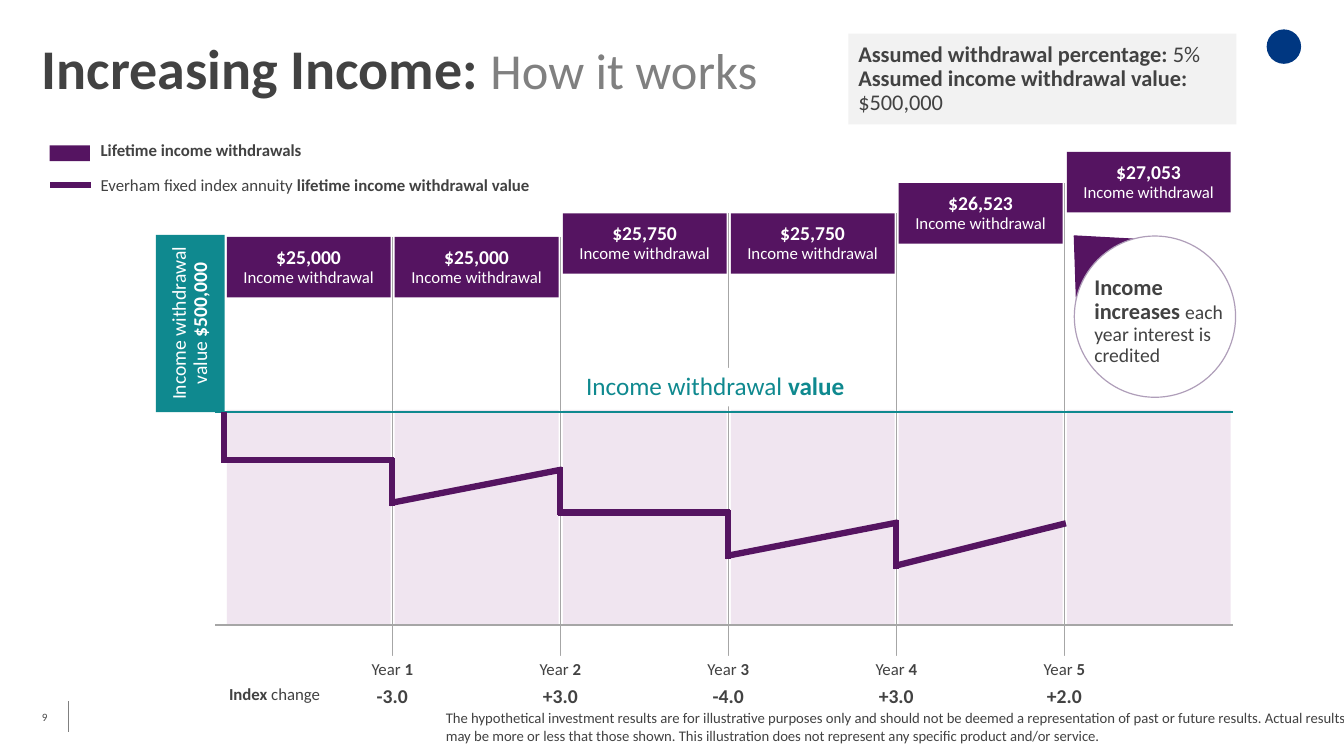
"""Build the slide on how rising income withdrawals work."""
from lxml.etree import SubElement
from pptx import Presentation
from pptx.dml.color import RGBColor as RGB
from pptx.enum.shapes import MSO_CONNECTOR as LINK, MSO_SHAPE as KIND
from pptx.enum.text import MSO_ANCHOR as ANCHOR, PP_ALIGN as ALIGN
from pptx.oxml.ns import qn
from pptx.util import Inches, Pt

WHITE = RGB(0xFF, 0xFF, 0xFF)
INK = RGB(0x42, 0x42, 0x42)
DARK = RGB(0x4D, 0x4D, 0x4D)
GREY = RGB(0x80, 0x80, 0x80)
RULE = RGB(0xA6, 0xA6, 0xA6)
PALE = RGB(0xF2, 0xF2, 0xF2)
PLUM = RGB(0x55, 0x14, 0x61)
LILAC = RGB(0xE5, 0xD0, 0xE5)
EDGE = RGB(0xAF, 0x9E, 0xB9)
TEAL = RGB(0x0F, 0x89, 0x8F)
NAVY = RGB(0x00, 0x37, 0x81)

COLS, ROWS = 160, 90
UNIT = Inches(7.5) / ROWS
LEFT, STEP, BAR = 27, 20, 19.5
TOP, BASE = 49, 74.4
BARS = [("$25,000", 28.2), ("$25,000", 28.2), ("$25,750", 25.4),
        ("$25,750", 25.4), ("$26,523", 21.8), ("$27,053", 18.1)]
MOVES = ["-3.0", "+3.0", "-4.0", "+3.0", "+2.0"]
PATH = [(49.3, 54.8, 54.8), (54.8, 59.9, 55.9), (55.9, 61, 61),
        (61, 66.2, 62.2), (62.2, 67.4, 62.3)]


def grid(*nums):
    """Turn grid units into slide lengths."""
    return [round(num * UNIT) for num in nums]


def tick(year):
    """Give the x of the line that ends a year."""
    return LEFT - 0.3 + STEP * year


def put(item, vals):
    """Set each value of a dict on an object."""
    for key, val in vals.items():
        setattr(item, key, val)


def write(shape, paras, color=INK, inset=None, anchor=ANCHOR.TOP, **form):
    """Fill a shape with paragraphs of (text, size, bold[, color]) runs."""
    frame = shape.text_frame
    put(frame, {"word_wrap": True, "vertical_anchor": anchor})
    if inset is not None:
        put(frame, dict(zip(("margin_left", "margin_right", "margin_top",
                             "margin_bottom"), grid(*inset))))
    look = {"alignment": ALIGN.LEFT, "line_spacing": 0.9} | form
    for num, runs in enumerate(paras):
        para = frame.add_paragraph() if num else frame.paragraphs[0]
        put(para, look)
        if num == 0:
            para.space_before = Pt(0)
        for text, size, bold, *tint in runs:
            run = para.add_run()
            run.text = text
            put(run.font, {"name": "Calibri", "size": Pt(size), "bold": bold})
            run.font.color.rgb = tint[0] if tint else color


def text(slide, box, paras, **form):
    """Add a text box."""
    write(slide.shapes.add_textbox(*grid(*box)), paras, **form)


def block(slide, box, fill, kind=KIND.RECTANGLE, edge=None, alpha=None):
    """Add a filled shape."""
    shape = slide.shapes.add_shape(kind, *grid(*box))
    shape.shadow.inherit = False
    shape.fill.solid()
    shape.fill.fore_color.rgb = fill
    if alpha:
        tint = shape.fill._xPr.find(qn("a:solidFill"))[0]
        SubElement(tint, qn("a:alpha"), val=str(alpha * 1000))
    if edge:
        shape.line.color.rgb = edge
        shape.line.width = Pt(0.85)
    else:
        shape.line.fill.background()
    return shape


def line(slide, ends, color, width):
    """Add a straight line between two grid points."""
    link = slide.shapes.add_connector(LINK.STRAIGHT, *grid(*ends))
    link.line.color.rgb = color
    link.line.width = Pt(width)
    SubElement(link._element.spPr, qn("a:effectLst"))


def head(slide):
    """Add the title, mark, assumptions and legend."""
    block(slide, (150.8, 3.5, 4.1, 4.1), NAVY, KIND.OVAL)
    text(slide, (5, 1.4, 93.4, 10.7),
         [[("Increasing Income: ", 40, True),
           ("How it works", 36, False, GREY)]],
         inset=(0, 0, 0, 0), anchor=ANCHOR.BOTTOM)
    note = block(slide, (101, 4, 46.2, 10.8), PALE)
    write(note, [[("Assumed withdrawal percentage: ", 16, True),
                  ("5%", 16, False)],
                 [("Assumed income withdrawal value: ", 16, True),
                  ("$500,000", 16, False)]], anchor=ANCHOR.MIDDLE)
    block(slide, (5.9, 17.3, 4.8, 1.9), PLUM)
    line(slide, (6, 22, 10.8, 22), PLUM, 4.5)
    text(slide, (10.8, 16.3, 63.8, 7.9),
         [[("Lifetime income withdrawals", 12, True)],
          [("Everham fixed index annuity ", 12, False),
           ("lifetime income withdrawal value", 12, True)]],
         space_before=Pt(12))


def chart(slide):
    """Draw the shaded years, bars and value path."""
    for num in range(len(BARS)):
        block(slide, (LEFT + STEP * num, 48.8, BAR, 25.6), LILAC, alpha=55)
    line(slide, (25.6, BASE, 146.8, BASE), RULE, 1.5)
    for num, (sum_, top) in enumerate(BARS):
        if num < len(MOVES):
            line(slide, (tick(num + 1), top, tick(num + 1), 80), RULE, 1)
        bar = block(slide, (LEFT + STEP * num, top, BAR, 7.2), PLUM)
        write(bar, [[(sum_, 14, True)], [("Income withdrawal", 12, False)]],
              color=WHITE, anchor=ANCHOR.MIDDLE, alignment=ALIGN.CENTER)
    line(slide, (25.6, TOP, 146.8, TOP), TEAL, 1.5)
    name = block(slide, (68.6, 43.8, 36.4, 4.6), WHITE)
    write(name, [[("Income withdrawal ", 18, False), ("value", 18, True)]],
          color=TEAL, anchor=ANCHOR.MIDDLE)
    side = block(slide, (12.1, 34.4, 21.1, 8.2), TEAL)
    side.rotation = 270
    write(side, [[("Income withdrawal value ", 14, False),
                  ("$500,000", 14, True)]],
          color=WHITE, anchor=ANCHOR.MIDDLE, alignment=ALIGN.CENTER)
    for year, (top, low, end) in enumerate(PATH):
        spot = tick(year)
        line(slide, (spot, top - 0.3, spot, low + 0.3), PLUM, 4.5)
        line(slide, (spot - 0.3, low, spot + STEP + 0.2, end), PLUM, 4.5)


def years(slide):
    """Label each year with its index change."""
    text(slide, (25.4, 80.5, 13.9, 4.6),
         [[("Index", 12, True), (" change", 12, False)]],
         anchor=ANCHOR.MIDDLE, alignment=ALIGN.RIGHT)
    for year, move in enumerate(MOVES, 1):
        spot = tick(year)
        label = block(slide, (spot - 3.8, 78.1, 7.6, 4.3), WHITE)
        write(label, [[("Year", 12, False), (f" {year}", 12, True)]],
              alignment=ALIGN.CENTER)
        text(slide, (spot - 3.3, 81.1, 6.6, 3.6), [[(move, 14, True)]],
             alignment=ALIGN.CENTER)


def bubble(slide):
    """Add the round callout and its pointer."""
    tail = block(slide, (123.2, 26.9, 15.2, 8.3), PLUM,
                 KIND.ISOSCELES_TRIANGLE, PLUM)
    tail.rotation = 315.6
    block(slide, (127.9, 28.1, 19.2, 19.2), WHITE, KIND.OVAL, EDGE)
    text(slide, (129.1, 32.3, 19.7, 8.2),
         [[("Income increases ", 16, True),
           ("each year interest is credited", 14, False)]])


def foot(slide):
    """Add the page number and the disclaimer."""
    line(slide, (8.1, 83.5, 8.1, 87.2), GREY, 0.75)
    text(slide, (5, 83, 4.8, 4.8), [[("9", 8, False)]], color=DARK,
         inset=(0, 0, 0.7, 0.7), anchor=ANCHOR.MIDDLE, line_spacing=1.0)
    text(slide, (51.9, 83.8, 111.4, 5.8), [[(
        "The hypothetical investment results are for illustrative purposes "
        "only and should not be deemed a representation of past or future "
        "results. Actual results may be more or less that those shown. This "
        "illustration does not represent any specific product and/or "
        "service.", 10.5, False)]], line_spacing=1.0)


def main():
    """Build and save the slide."""
    deck = Presentation()
    wide, high = grid(COLS, ROWS)
    put(deck, {"slide_width": wide, "slide_height": high})
    slide = deck.slides.add_slide(deck.slide_layouts[6])
    for part in (head, chart, years, bubble, foot):
        part(slide)
    deck.save("out.pptx")


if __name__ == "__main__":
    main()
